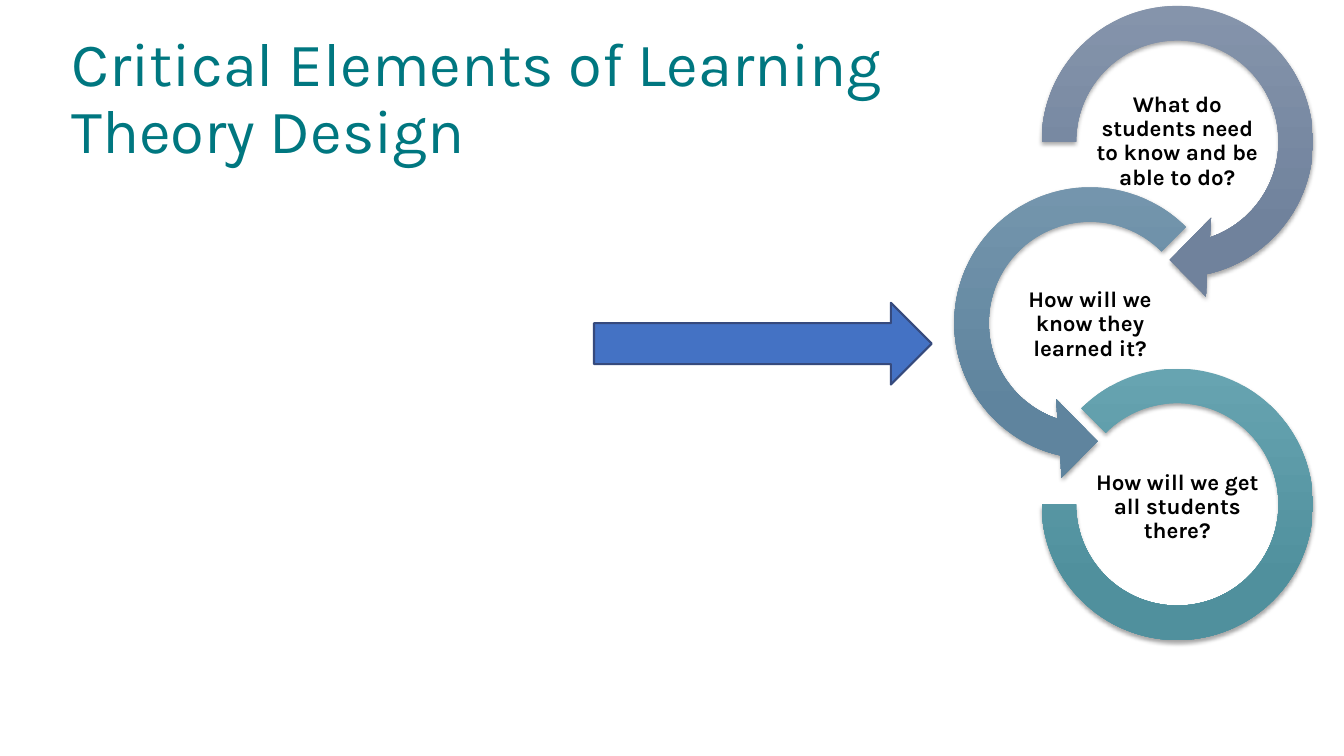
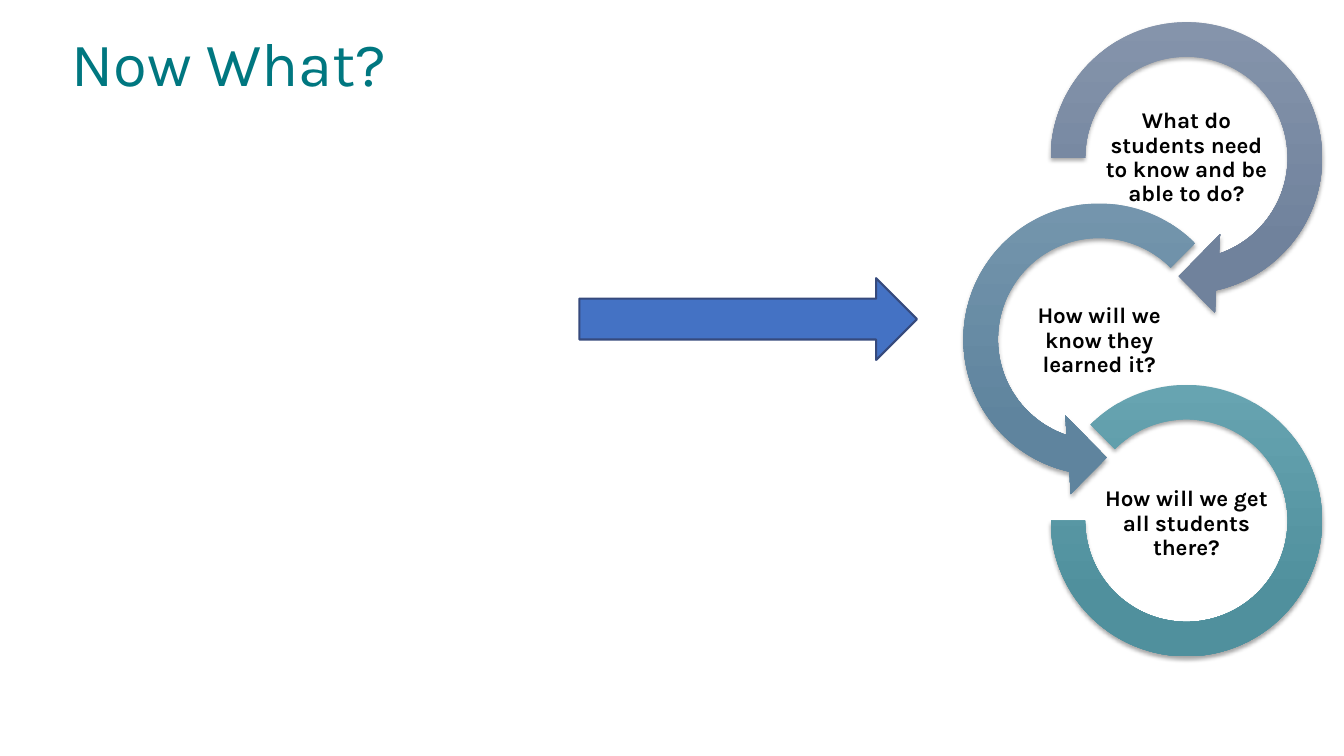
from math import cos, radians, sin, tan

from lxml.etree import SubElement
from pptx import Presentation
from pptx.dml.color import RGBColor
from pptx.enum.shapes import MSO_SHAPE as Preset
from pptx.enum.text import MSO_ANCHOR as Anchor, PP_ALIGN as Align
from pptx.oxml.ns import qn
from pptx.util import Cm, Pt

FONT = "Karla"
TEAL = RGBColor(0x00, 0x77, 0x80)
BLACK = RGBColor(0x00, 0x00, 0x00)
POINTER_BLUE = RGBColor(0x44, 0x72, 0xC4)
POINTER_EDGE = RGBColor(0x36, 0x4A, 0x7D)
SLATE = RGBColor(0x87, 0x96, 0xAD), RGBColor(0x70, 0x82, 0x9C)
STEEL = RGBColor(0x76, 0x97, 0xAE), RGBColor(0x5F, 0x84, 0x9E)
LAGOON = RGBColor(0x67, 0xA4, 0xB1), RGBColor(0x50, 0x90, 0x9D)

OUTER, INNER = 3.42, 2.55
ARROW_BOX = 7.95
STEP_X, STEP_Y = 2.2, 4.57
LABEL_W, LABEL_H, LABEL_DRIFT = 4.42, 2.21, 0.04
ARROWHEAD = [(0.72, 3.9), (-0.19, 2.98), (0.85, 1.92)]
OUTER_END, INNER_END = 437.4, 431.2
CURVES = 3

QUESTIONS = [
    "What do students need to know and be able to do?",
    "How will we know they learned it?",
    "How will we get all students there?",
]


def write(box, text, size, color, bold=False, align=Align.LEFT, inset=(0.25, 0.13)):
    frame = box.text_frame
    frame.word_wrap = True
    frame.margin_left = frame.margin_right = Cm(inset[0])
    frame.margin_top = frame.margin_bottom = Cm(inset[1])
    line = frame.paragraphs[0]
    line.text = text
    line.alignment = align
    line.line_spacing = 0.9
    line.font.name = FONT
    line.font.size = Pt(size)
    line.font.bold = bold
    line.font.color.rgb = color
    return frame


def style_ring(ring, shades):
    ring.fill.gradient()
    ring.fill.gradient_angle = 270
    for stop, shade, position in zip(ring.fill.gradient_stops, shades, (0, 0.78)):
        stop.color.rgb = shade
        stop.position = position
    ring.line.fill.background()
    ring.shadow.inherit = False
    effects = ring.element.spPr.find(qn("a:effectLst"))
    shadow = SubElement(effects, qn("a:outerShdw"), blurRad=str(Pt(3)),
                        dist=str(Pt(2)), dir="5400000", rotWithShape="0")
    black = SubElement(shadow, qn("a:srgbClr"), val=str(BLACK))
    SubElement(black, qn("a:alpha"), val="35000")


def on_circle(radius, angle):
    return radius * cos(angle), radius * sin(angle)


def arc(radius, start, end):
    step = radians(end - start) / CURVES
    reach = 4 / 3 * tan(step / 4)
    curves = []
    for i in range(CURVES):
        first = radians(start) + i * step
        (x1, y1), (x2, y2) = on_circle(radius, first), on_circle(radius, first + step)
        curves.append([(x1 - reach * y1, y1 + reach * x1),
                       (x2 + reach * y2, y2 - reach * x2), (x2, y2)])
    return [("cubicBezTo", curve) for curve in curves]


def add_curved_arrow(shapes, x, y, tail, side, shades):
    half = ARROW_BOX / 2
    corners = [(Cm(x + dx * half), Cm(y + dy * half))
               for dx, dy in ((-1, -1), (1, -1), (1, 1), (-1, 1))]
    builder = shapes.build_freeform(*corners[0])
    builder.add_line_segments(corners[1:], close=True)
    arrow = builder.convert_to_shape()
    outline = next(arrow.element.iter(qn("a:path")))
    for command in list(outline):
        outline.remove(command)
    tail_corner = on_circle(OUTER, radians(tail))
    head = ARROWHEAD + [on_circle(INNER, radians(INNER_END))]
    commands = [("moveTo", [tail_corner]), *arc(OUTER, tail, OUTER_END),
                *(("lnTo", [point]) for point in head),
                *arc(INNER, INNER_END, tail), ("close", [])]
    for command, points in commands:
        segment = SubElement(outline, qn(f"a:{command}"))
        for dx, dy in points:
            SubElement(segment, qn("a:pt"), x=str(int(Cm(half + side * dx))),
                       y=str(int(Cm(half + dy))))
    style_ring(arrow, shades)


def add_open_ring(shapes, x, y, shades):
    ring = shapes.add_shape(Preset.BLOCK_ARC, Cm(x - OUTER), Cm(y - OUTER),
                            Cm(2 * OUTER), Cm(2 * OUTER))
    for i, value in enumerate((135, 108, (OUTER - INNER) / (2 * OUTER))):
        ring.adjustments[i] = value
    style_ring(ring, shades)


def add_question(shapes, x, y, question):
    label = shapes.add_textbox(Cm(x - LABEL_W / 2), Cm(y - LABEL_H / 2),
                               Cm(LABEL_W), Cm(LABEL_H))
    frame = write(label, question, 16, BLACK, True, Align.CENTER, (0.03, 0.03))
    frame.vertical_anchor = Anchor.MIDDLE


def add_question_chain(slide, x, y):
    shapes = slide.shapes.add_group_shape().shapes
    centers = [(x, y), (x - STEP_X, y + STEP_Y), (x, y + 2 * STEP_Y)]
    rings = [
        lambda cx, cy: add_curved_arrow(shapes, cx, cy, 180, 1, SLATE),
        lambda cx, cy: add_curved_arrow(shapes, cx, cy, 225, -1, STEEL),
        lambda cx, cy: add_open_ring(shapes, cx, cy, LAGOON),
    ]
    for i, ((cx, cy), add_ring, question) in enumerate(zip(centers, rings, QUESTIONS)):
        add_ring(cx, cy)
        add_question(shapes, cx, cy + i * LABEL_DRIFT, question)


def add_pointer(slide, x, y):
    pointer = slide.shapes.add_shape(Preset.RIGHT_ARROW, Cm(x), Cm(y), Cm(8.51), Cm(2.06))
    pointer.shadow.inherit = False
    pointer.fill.solid()
    pointer.fill.fore_color.rgb = POINTER_BLUE
    pointer.line.color.rgb = POINTER_EDGE
    pointer.line.width = Pt(1.5)


def add_design_slide(deck, title, chain_at, pointer_at):
    slide = deck.slides.add_slide(deck.slide_layouts[6])
    heading = slide.shapes.add_textbox(Cm(1.55), Cm(0.71), Cm(23.88), Cm(3.66))
    write(heading, title, 44, TEAL)
    add_question_chain(slide, *chain_at)
    add_pointer(slide, *pointer_at)


def main():
    deck = Presentation()
    deck.slide_width, deck.slide_height = Cm(33.87), Cm(19.05)
    add_design_slide(deck, "Critical Elements of Learning \vTheory Design",
                     (29.67, 3.57), (14.97, 7.63))
    add_design_slide(deck, "Now What?", (29.9, 3.98), (14.6, 7.01))
    deck.save("out.pptx")


if __name__ == "__main__":
    main()
